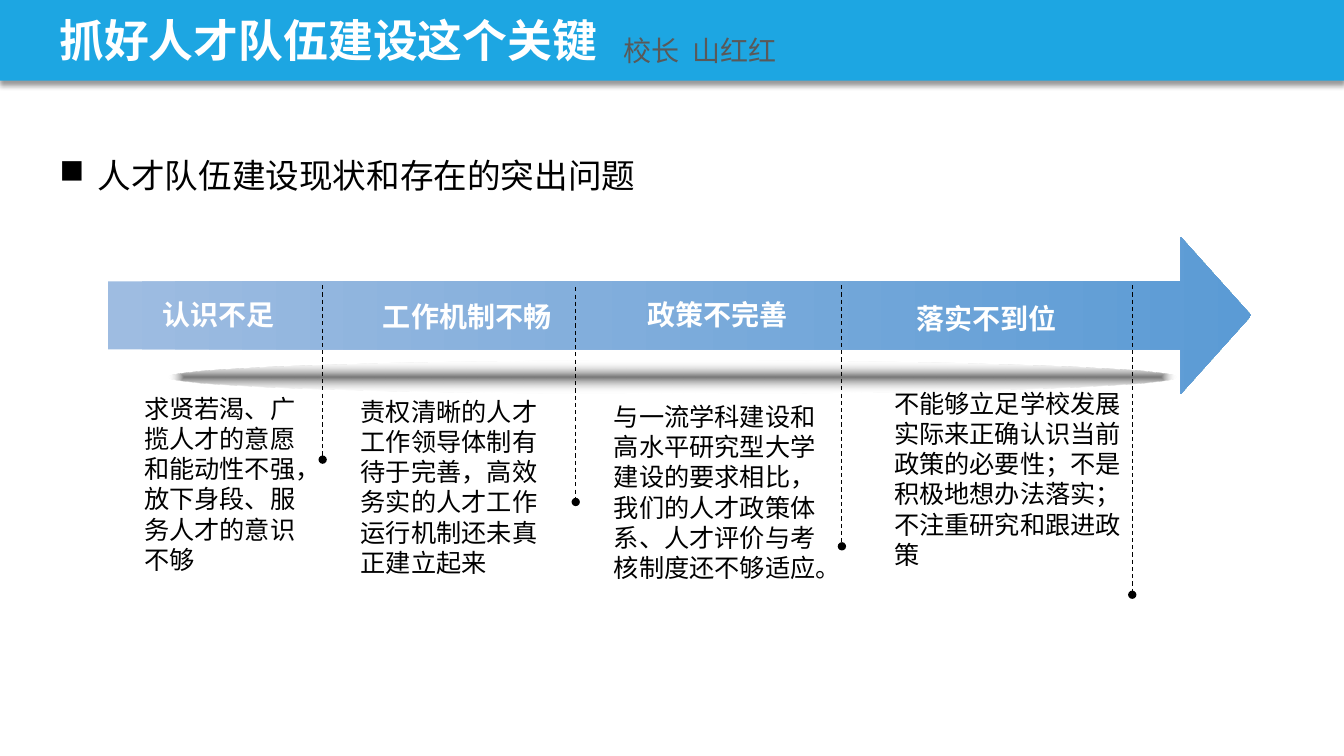
from lxml import etree
from pptx import Presentation
from pptx.dml.color import RGBColor
from pptx.enum.dml import MSO_LINE
from pptx.enum.shapes import MSO_CONNECTOR, MSO_SHAPE
from pptx.enum.text import MSO_AUTO_SIZE
from pptx.oxml.ns import qn
from pptx.util import Inches, Pt

RECT, OVAL, ARROW = MSO_SHAPE.RECTANGLE, MSO_SHAPE.OVAL, MSO_SHAPE.RIGHT_ARROW
LINE, DASH = MSO_CONNECTOR.STRAIGHT, MSO_LINE.DASH
GROW = MSO_AUTO_SIZE.SHAPE_TO_FIT_TEXT
FONT = "Noto Sans CJK SC"
BLACK, WHITE = "000000", "FFFFFF"

# Heading (text, x, y), body (text, x, y, width), divider (x, top, bottom),
# all measured from the arrow's top left corner
STAGES = [
    (("认识不足", 0.44, 0.55),
     ("求贤若渴、广揽人才的意愿和能动性不强，放下身段、服务人才的意识不够",
      0.26, 1.5, 1.78), (2.13, 0.48, 2.21)),
    (("工作机制不畅", 2.63, 0.57),
     ("责权清晰的人才工作领导体制有待于完善，高效务实的人才工作运行机制还未真正建立起来",
      2.41, 1.53, 2.12), (4.64, 0.5, 2.63)),
    (("政策不完善", 5.25, 0.55),
     ("与一流学科建设和高水平研究型大学建设的要求相比，我们的人才政策体系、"
      "人才评价与考核制度还不够适应。", 4.92, 1.58, 2.28), (7.28, 0.48, 3.07)),
    (("落实不到位", 7.92, 0.59),
     ("不能够立足学校发展实际来正确认识当前政策的必要性；不是积极地想办法落实；"
      "不注重研究和跟进政策", 7.7, 1.45, 2.46), (10.16, 0.48, 3.55)),
]


def color(code):
    return RGBColor.from_string(code)


def add(parent, tag, **attrs):
    return etree.SubElement(parent, qn(tag), attrs)


def label(slide, x, y, w, h, text, size, tint, bold=False, wrap=True):
    box = slide.shapes.add_textbox(Inches(x), Inches(y), Inches(w), Inches(h))
    frame = box.text_frame
    frame.word_wrap = wrap
    frame.auto_size = GROW
    para = frame.paragraphs[0]
    run = para.add_run()
    run.text = text
    font = run.font
    font.name, font.size, font.bold = FONT, Pt(size), bold
    font.color.rgb = color(tint)
    add(font._element, "a:ea", typeface=FONT)
    return para


def shape(slide, kind, x, y, w, h):
    item = slide.shapes.add_shape(kind, Inches(x), Inches(y), Inches(w), Inches(h))
    item.shadow.inherit = False
    item.line.fill.background()
    return item


def blend(item, first, last):
    item.fill.gradient()
    item.fill.gradient_angle = 0
    for stop, code in zip(item.fill.gradient_stops, (first, last)):
        stop.color.rgb = color(code)
    return item._element.spPr.find(qn("a:gradFill"))


def header(slide, x, y, w, h):
    # Blue bar with a soft shadow below
    bar = shape(slide, RECT, x, y, w, h)
    bar.fill.solid()
    bar.fill.fore_color.rgb = color("1DA6E2")
    effects = bar._element.spPr.find(qn("a:effectLst"))
    shadow = add(effects, "a:outerShdw", blurRad=str(Pt(4)), dist=str(Pt(3)),
                 dir="5400000", algn="t", rotWithShape="0")
    add(add(shadow, "a:srgbClr", val=BLACK), "a:alpha", val="40000")
    # Title and speaker
    label(slide, x + 0.49, y + 0.08, 5.6, 0.64, "抓好人才队伍建设这个关键", 32, WHITE, True)
    label(slide, x + 6.09, y + 0.28, 2.42, 0.44, "校长  山红红", 20, "595959")


def topic(slide, x, y, w, h):
    para = label(slide, x, y, w, h, "人才队伍建设现状和存在的突出问题", 24, BLACK, wrap=False)
    props = para._p.get_or_add_pPr()
    props.set("marL", str(Inches(0.38)))
    props.set("indent", str(-Inches(0.38)))
    add(props, "a:buChar", char="■")


def divider(slide, x, top, bottom):
    line = slide.shapes.add_connector(
        LINE, Inches(x), Inches(top), Inches(x), Inches(bottom))
    line.line.color.rgb = color(BLACK)
    line.line.width = Pt(0.75)
    line.line.dash_style = DASH
    add(line.line._get_or_add_ln(), "a:tailEnd", type="oval")
    add(line._element.spPr, "a:effectLst")


def process(slide, x, y, w, h):
    # Arrow
    arrow = shape(slide, ARROW, x, y, w, h)
    arrow.adjustments[0], arrow.adjustments[1] = 0.433, 0.449
    blend(arrow, "9EBCE1", "5B9BD5")
    # Shade under the arrow, fading out from its centre
    shade = shape(slide, OVAL, x + 0.6, y + 1.23, 10, 0.32)
    grad = blend(shade, "777777", WHITE)
    add(grad.findall(".//" + qn("a:srgbClr"))[-1], "a:alpha", val="0")
    grad.remove(grad.find(qn("a:lin")))
    focus = add(grad, "a:path", path="shape")
    add(focus, "a:fillToRect", l="50000", t="50000", r="50000", b="50000")
    # Stages
    for head, body, rule in STAGES:
        text, dx, dy = head
        label(slide, x + dx, y + dy, 0.21 + 0.28 * len(text), 0.44,
              text, 20, WHITE, True, False)
        text, dx, dy, width = body
        label(slide, x + dx, y + dy, width, 1.92, text, 18, BLACK)
        dx, top, bottom = rule
        divider(slide, x + dx, y + top, y + bottom)


def main():
    deck = Presentation()
    deck.slide_width, deck.slide_height = Inches(13.33), Inches(7.5)
    slide = deck.slides.add_slide(deck.slide_layouts[6])
    header(slide, 0, 0, 13.33, 0.8)
    topic(slide, 0.49, 1.49, 5.97, 0.5)
    process(slide, 1.07, 2.35, 11.34, 1.56)
    deck.save("out.pptx")


if __name__ == "__main__":
    main()
